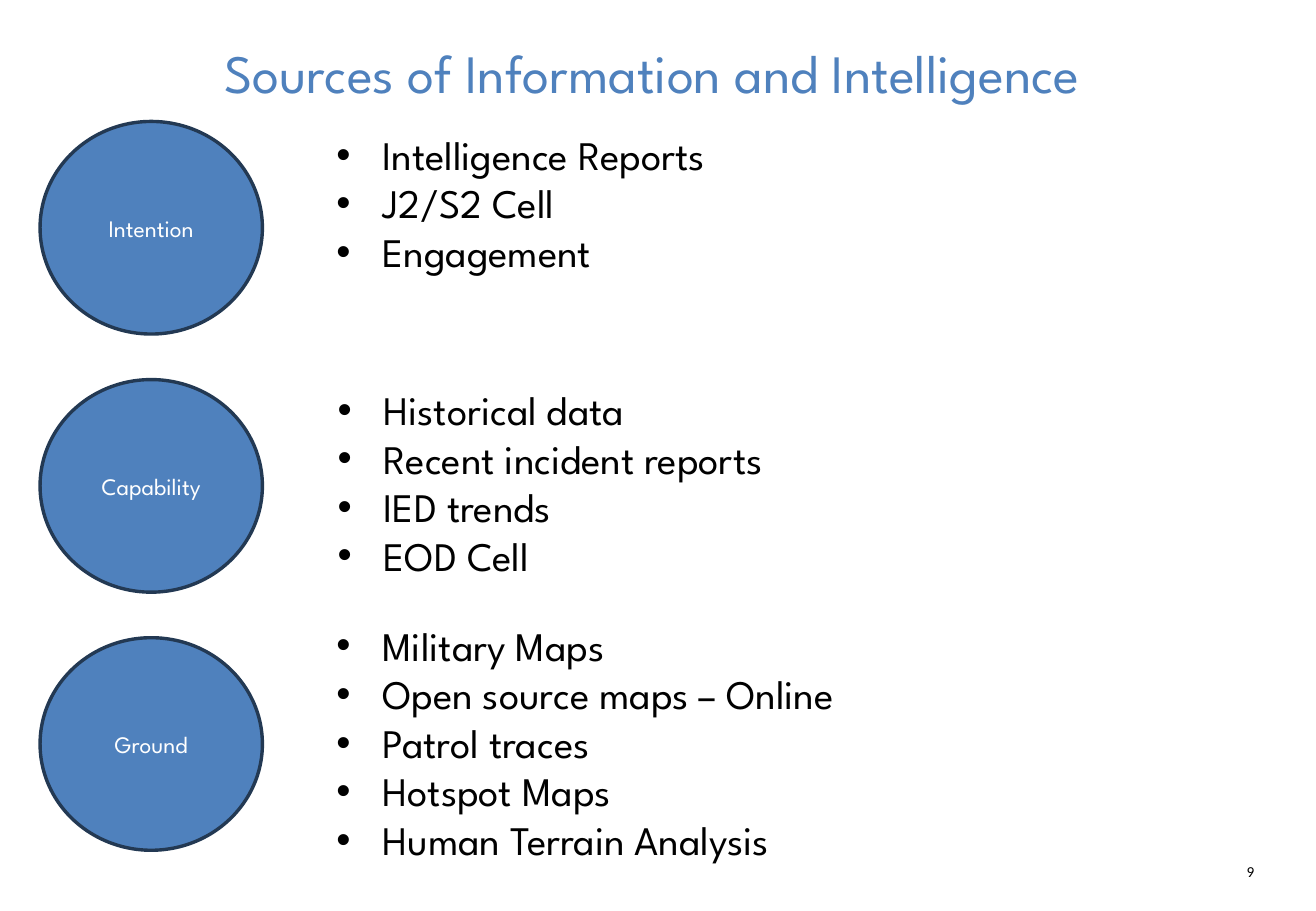
import pptx
import pptx.util
import pptx.dml.color
import pptx.enum.shapes
import pptx.enum.text
import pptx.oxml.ns
import lxml.etree

Inches = pptx.util.Inches
Pt = pptx.util.Pt
RGBColor = pptx.dml.color.RGBColor
ALIGN = pptx.enum.text.PP_ALIGN
ANCHOR = pptx.enum.text.MSO_ANCHOR

BLUE = RGBColor(0x4F, 0x81, 0xBD)
NAVY = RGBColor(0x23, 0x39, 0x53)
WHITE = RGBColor(0xFF, 0xFF, 0xFF)
BLACK = RGBColor(0, 0, 0)

TITLE = "Sources of Information and Intelligence"
PAGE_NUMBER = "9"
SOURCES = [
    ("Intention", (2.67, 1.02, 7.37, 1.31),
     ["Intelligence Reports", "J2/S2 Cell", "Engagement"]),
    ("Capability", (2.68, 3.12, 7.37, 1.72),
     ["Historical data", "Recent incident reports", "IED trends", "EOD Cell"]),
    ("Ground", (2.67, 5.06, 7.37, 2.12),
     ["Military Maps", "Open source maps – Online", "Patrol traces",
      "Hotspot Maps", "Human Terrain Analysis"]),
]
CIRCLE_LEFT, CIRCLE_TOP, CIRCLE_STEP = 0.33, 1, 2.125
CIRCLE_WIDTH, CIRCLE_HEIGHT = 1.83, 1.75
BULLET_INDENT = 0.38

HEADING = {"name": "League Spartan", "size": Pt(32), "color": BLUE}
LABEL = {"name": "League Spartan", "size": Pt(14), "color": WHITE}
BODY = {"name": "League Spartan", "size": Pt(24), "color": BLACK}
NUMBER = {"name": "Calibri", "size": Pt(9), "color": BLACK}


def add_bullet(p):
    pPr = p._p.get_or_add_pPr()
    indent = Inches(BULLET_INDENT)
    pPr.set("marL", str(indent))
    pPr.set("indent", str(-indent))
    for tag, key, value in [("a:buFont", "typeface", "Arial"),
                            ("a:buChar", "char", "•")]:
        bullet = lxml.etree.SubElement(pPr, pptx.oxml.ns.qn(tag))
        bullet.set(key, value)


def write(sp, lines, style, align, anchor, bullets=False):
    tf = sp.text_frame
    tf.word_wrap = True
    tf.vertical_anchor = anchor
    for i, line in enumerate(lines):
        p = tf.add_paragraph() if i else tf.paragraphs[0]
        p.alignment = align
        if bullets:
            add_bullet(p)
        r = p.add_run()
        r.text = line
        for key, value in style.items():
            if key == "color":
                r.font.color.rgb = value
            else:
                setattr(r.font, key, value)


def add_text(s, box, *args, **kwargs):
    sp = s.shapes.add_textbox(*map(Inches, box))
    write(sp, *args, **kwargs)


def add_circle(s, top, label):
    box = (CIRCLE_LEFT, top, CIRCLE_WIDTH, CIRCLE_HEIGHT)
    sp = s.shapes.add_shape(pptx.enum.shapes.MSO_SHAPE.OVAL, *map(Inches, box))
    sp.shadow.inherit = False
    sp.fill.solid()
    sp.fill.fore_color.rgb = BLUE
    sp.line.color.rgb = NAVY
    sp.line.width = Pt(2)
    write(sp, [label], LABEL, ALIGN.CENTER, ANCHOR.MIDDLE)


def main():
    prs = pptx.Presentation()
    prs.slide_width = Inches(10.83)
    prs.slide_height = Inches(7.5)
    s = prs.slides.add_slide(prs.slide_layouts[6])
    add_text(s, (9.82, 7.05, 0.6, 0.25), [PAGE_NUMBER], NUMBER,
             ALIGN.RIGHT, ANCHOR.TOP)
    add_text(s, (0.7, 0.17, 9.34, 0.85), [TITLE], HEADING,
             ALIGN.CENTER, ANCHOR.MIDDLE)
    for i, (label, box, items) in enumerate(SOURCES):
        add_circle(s, CIRCLE_TOP + i * CIRCLE_STEP, label)
        add_text(s, box, items, BODY, ALIGN.LEFT, ANCHOR.TOP, bullets=True)
    prs.save("out.pptx")


if __name__ == "__main__":
    main()
